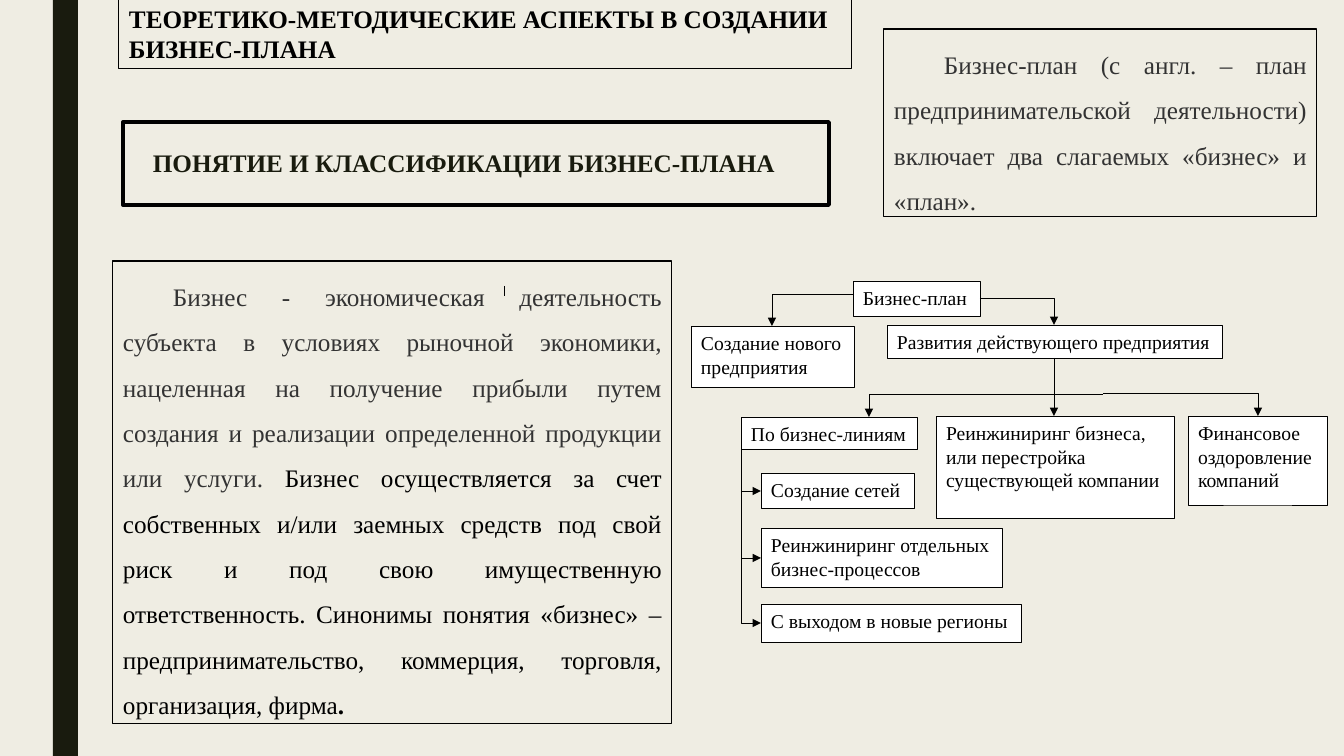
from lxml.etree import SubElement
from pptx import Presentation
from pptx.dml.color import RGBColor
from pptx.enum.shapes import MSO_CONNECTOR, MSO_SHAPE
from pptx.enum.text import MSO_ANCHOR, PP_ALIGN
from pptx.oxml.ns import qn
from pptx.util import Pt

SCALE = 914400 / 100.8  # EMU in one px
FACE = "Times New Roman"
INK, GREY, DARK = "000000", "333333", "191B0E"
PAPER, WHITE = "EFEDE3", "FFFFFF"
LEFT, WIDE = PP_ALIGN.LEFT, PP_ALIGN.JUSTIFY

HEAD = {"size": Pt(18), "bold": True}
BODY = {"size": Pt(18), "bold": False}
NODE = {"size": Pt(14), "bold": False}

# Chart boxes: left, top, width, height, text
NODES = [
    (853, 281, 127, 35, "Бизнес-план"),
    (691, 326, 163, 61, "Создание нового предприятия"),
    (887, 325, 335, 33, "Развития действующего предприятия"),
    (741, 417, 176, 32, "По бизнес-линиям"),
    (1188, 416, 139, 89, "Финансовое оздоровление компаний"),
    (936, 416, 238, 102,
     "Реинжиниринг бизнеса, или перестройка существующей компании"),
    (761, 604, 260, 38, "С выходом в новые регионы"),
    (761, 473, 153, 35, "Создание сетей"),
    (761, 528, 241, 59, "Реинжиниринг отдельных бизнес-процессов"),
]

# Bends run level first, then upright: x1, y1, x2, y2, end with the arrow
BENDS = [
    (853, 294, 772, 326, "tailEnd"),
    (980, 298, 1054, 325, "tailEnd"),
    (1103, 394, 869, 417, "tailEnd"),
    (1103, 393, 1258, 416, "tailEnd"),
    (761, 623, 741, 449, "headEnd"),
]

# Straight lines
RULES = [
    (504, 286, 504, 296, None),
    (741, 558, 761, 558, "tailEnd"),
    (741, 491, 761, 491, "tailEnd"),
    (1054, 358, 1054, 416, "tailEnd"),
]


def px(*nums):
    return [round(num * SCALE) for num in nums]


def tint(code):
    return RGBColor.from_string(code)


def apply(thing, form):
    for key, val in form.items():
        setattr(thing, key, val)


def box(slide, place, fill=None, line=None):
    """Draw a box; line is its weight in points."""
    shape = slide.shapes.add_shape(MSO_SHAPE.RECTANGLE, *px(*place))
    shape.shadow.inherit = False
    if fill:
        shape.fill.solid()
        shape.fill.fore_color.rgb = tint(fill)
    else:
        shape.fill.background()
    if line:
        shape.line.width = Pt(line)
        shape.line.color.rgb = tint(INK)
    else:
        shape.line.fill.background()
    return shape


def write(shape, runs, font, align=LEFT, space=1.0, indent=0):
    """Fill a shape with one paragraph of (text, colour, changes) runs."""
    frame = shape.text_frame
    side, edge = px(10, 5)
    apply(frame, {
        "word_wrap": True, "vertical_anchor": MSO_ANCHOR.TOP,
        "margin_left": side, "margin_right": side,
        "margin_top": edge, "margin_bottom": edge,
    })
    para = frame.paragraphs[0]
    apply(para, {"alignment": align, "line_spacing": space})
    if indent:
        para._p.get_or_add_pPr().set("indent", str(px(indent)[0]))
    for text, code, more in runs:
        run = para.add_run()
        run.text = text
        apply(run.font, {"name": FACE, **font, **more})
        run.font.color.rgb = tint(code)


def link(slide, ends, arrow=None, bent=False):
    kind = MSO_CONNECTOR.ELBOW if bent else MSO_CONNECTOR.STRAIGHT
    wire = slide.shapes.add_connector(kind, *px(*ends))
    wire.line.width = Pt(0.5)
    wire.line.color.rgb = tint(INK)
    props = wire._element.spPr
    if bent:
        props.find(qn("a:prstGeom")).set("prst", "bentConnector2")
    if arrow:
        SubElement(props.find(qn("a:ln")), qn("a:" + arrow), type="triangle")
    SubElement(props, qn("a:effectLst"))


def main():
    deck = Presentation()
    deck.slide_width, deck.slide_height = px(1344, 756)
    slide = deck.slides.add_slide(deck.slide_layouts[6])
    slide.background.fill.solid()
    slide.background.fill.fore_color.rgb = tint(PAPER)

    # Side bar
    box(slide, (53, 0, 25, 756), DARK)

    # Topic in its heavy frame
    topic = slide.shapes.add_textbox(*px(143, 146, 1058, 163))
    write(topic, [("ПОНЯТИЕ И КЛАССИФИКАЦИИ БИЗНЕС-ПЛАНА", DARK, {})],
          HEAD, space=0.89)
    box(slide, (123, 122, 706, 83), line=2.75)

    # Meaning of the two terms
    plan = box(slide, (884, 29, 433, 188), PAPER, 0.75)
    write(plan, [(
        "Бизнес-план (с англ. – план предпринимательской деятельности) "
        "включает два слагаемых «бизнес» и «план».", GREY, {},
    )], BODY, WIDE, 1.5, 50)
    trade = box(slide, (113, 261, 559, 463), line=0.75)
    write(trade, [
        ("Бизнес - экономическая деятельность субъекта в условиях рыночной "
         "экономики, нацеленная на получение прибыли путем создания и "
         "реализации определенной продукции или услуги. ", GREY, {}),
        ("Бизнес осуществляется за счет собственных и/или заемных средств "
         "под свой риск и под свою имущественную ответственность. Синонимы "
         "понятия «бизнес» – предпринимательство, коммерция, торговля, "
         "организация, фирма", INK, {}),
        (".", INK, {"bold": True}),
    ], BODY, WIDE, 1.5, 50)

    # Chart of plan types
    for *place, text in NODES:
        write(box(slide, place, WHITE, 0.5), [(text, INK, {})], NODE)
    for *ends, arrow in BENDS:
        link(slide, ends, arrow, True)
    for *ends, arrow in RULES:
        link(slide, ends, arrow)

    # Heading
    head = box(slide, (119, -2, 733, 71), line=0.75)
    write(head, [("ТЕОРЕТИКО-МЕТОДИЧЕСКИЕ АСПЕКТЫ В СОЗДАНИИ БИЗНЕС-ПЛАНА",
                  INK, {})], HEAD)

    deck.save("out.pptx")


if __name__ == "__main__":
    main()
